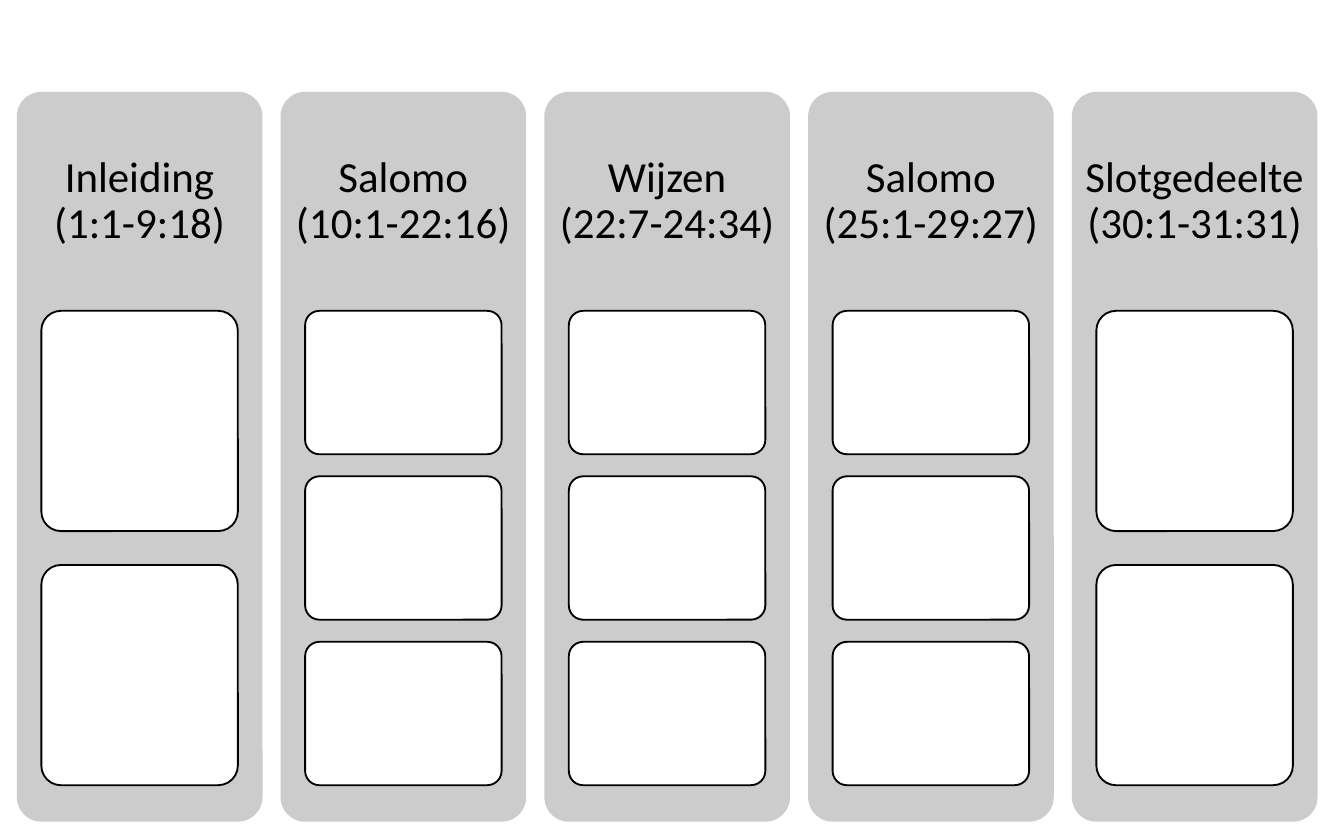
"""Build a slide with the five parts of a book as columns of empty cards."""
from dataclasses import dataclass

from pptx import Presentation
from pptx.dml.color import RGBColor
from pptx.enum.shapes import MSO_SHAPE as Shape
from pptx.enum.text import MSO_ANCHOR as Anchor, PP_ALIGN as Align
from pptx.slide import Slide
from pptx.util import Pt

COLOURS = {"panel": "CCCCCC", "card": "FFFFFF", "ink": "000000"}
PANEL_LEFT, PANEL_TOP, PANEL_WIDTH, PANEL_HEIGHT = 9, 49.2, 131.6, 391
PANEL_PITCH = 141.3
HEADING_HEIGHT = PANEL_HEIGHT * 0.3
CARD_WIDTH = PANEL_WIDTH * 0.8
CARDS_HEIGHT = PANEL_HEIGHT * 0.65
GAP_RATIO = 2 / 13


@dataclass(frozen=True)
class Section:
    heading: str
    cards: int


@dataclass(frozen=True)
class Frame:
    left: float
    top: float
    width: float
    height: float

    def lengths(self) -> tuple[Pt, Pt, Pt, Pt]:
        return Pt(self.left), Pt(self.top), Pt(self.width), Pt(self.height)


SECTIONS = (
    Section("Inleiding (1:1-9:18)", 2),
    Section("Salomo (10:1-22:16)", 3),
    Section("Wijzen (22:7-24:34)", 3),
    Section("Salomo (25:1-29:27)", 3),
    Section("Slotgedeelte (30:1-31:31)", 2),
)


def colour(name: str) -> RGBColor:
    return RGBColor.from_string(COLOURS[name])


def add_rounded(page: Slide, frame: Frame, fill: str, line: str | None = None) -> None:
    box = page.shapes.add_shape(Shape.ROUNDED_RECTANGLE, *frame.lengths())
    box.adjustments[0] = 0.1
    box.shadow.inherit = False
    box.fill.solid()
    box.fill.fore_color.rgb = colour(fill)
    if line:
        box.line.color.rgb = colour(line)
        box.line.width = Pt(1)
    else:
        box.line.fill.background()


def add_text(page: Slide, frame: Frame, text: str, *, size: float = 23,
             font: str = "Calibri", ink: str = "ink", inset: float = 6.9,
             spacing: float = 0.9) -> None:
    body = page.shapes.add_textbox(*frame.lengths()).text_frame
    body.word_wrap = True
    body.vertical_anchor = Anchor.MIDDLE
    body.margin_left = body.margin_right = Pt(inset)
    body.margin_top = body.margin_bottom = Pt(inset)
    para = body.paragraphs[0]
    para.alignment = Align.CENTER
    para.line_spacing = spacing
    span = para.add_run()
    span.text = text
    span.font.size = Pt(size)
    span.font.name = font
    span.font.color.rgb = colour(ink)


def add_section(page: Slide, section: Section, left: float) -> None:
    add_rounded(page, Frame(left, PANEL_TOP, PANEL_WIDTH, PANEL_HEIGHT), "panel")
    add_text(page, Frame(left, PANEL_TOP, PANEL_WIDTH, HEADING_HEIGHT), section.heading)
    height = CARDS_HEIGHT / (section.cards + (section.cards - 1) * GAP_RATIO)
    card_left = left + (PANEL_WIDTH - CARD_WIDTH) / 2
    for index in range(section.cards):
        top = PANEL_TOP + HEADING_HEIGHT + index * height * (1 + GAP_RATIO)
        add_rounded(page, Frame(card_left, top, CARD_WIDTH, height), "card", "ink")


def main() -> None:
    deck = Presentation()
    deck.slide_width, deck.slide_height = Pt(720), Pt(450)
    page = deck.slides.add_slide(deck.slide_layouts[6])
    for index, section in enumerate(SECTIONS):
        add_section(page, section, PANEL_LEFT + index * PANEL_PITCH)
    deck.save("out.pptx")


if __name__ == "__main__":
    main()
